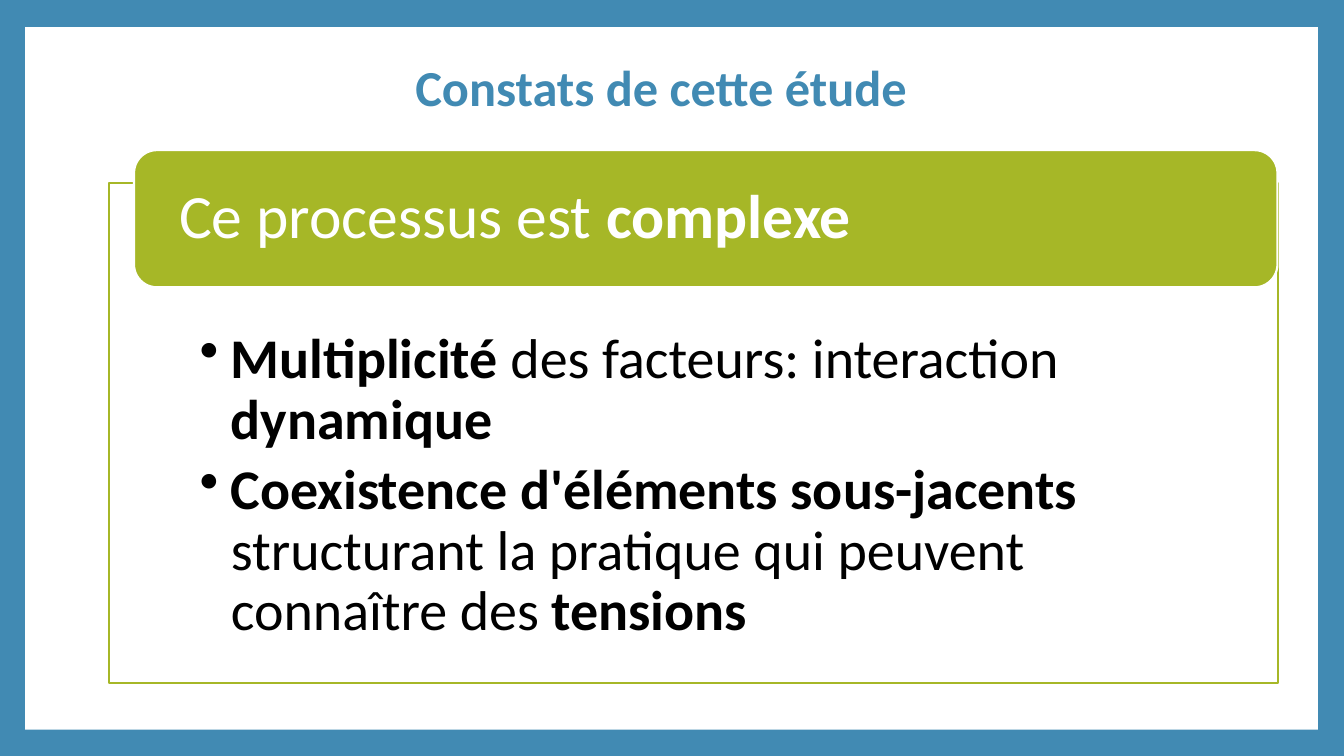
import pptx
import pptx.dml.color
import pptx.enum.shapes
import pptx.enum.text
import pptx.oxml.ns
import pptx.util
from lxml import etree
from pptx.util import Inches

BLUE = pptx.dml.color.RGBColor(0x41, 0x8A, 0xB3)
GREEN = pptx.dml.color.RGBColor(0xA6, 0xB7, 0x27)
WHITE = pptx.dml.color.RGBColor(0xFF, 0xFF, 0xFF)
BLACK = pptx.dml.color.RGBColor(0x00, 0x00, 0x00)

SHAPES = pptx.enum.shapes.MSO_SHAPE
ALIGN = pptx.enum.text.PP_ALIGN
ANCHOR = pptx.enum.text.MSO_ANCHOR


class SlideBuilder:
    """Holds the text style and the slide being built."""

    font = "Calibri"
    line_spacing = 0.9
    bullet_indent = Inches(0.31)

    def __init__(self, slide, background):
        self.slide = slide
        slide.background.fill.solid()
        slide.background.fill.fore_color.rgb = background

    def add_runs(self, paragraph, runs, size, color, align=ALIGN.LEFT):
        paragraph.alignment = align
        paragraph.line_spacing = self.line_spacing
        for text, bold in runs:
            run = paragraph.add_run()
            run.text = text
            run.font.name = self.font
            run.font.size = pptx.util.Pt(size)
            run.font.bold = bold
            run.font.color.rgb = color

    def frame(self, shape, insets, anchor):
        frame = shape.text_frame
        frame.word_wrap = True
        frame.auto_size = pptx.enum.text.MSO_AUTO_SIZE.NONE
        frame.vertical_anchor = anchor
        (frame.margin_left, frame.margin_top,
         frame.margin_right, frame.margin_bottom) = map(Inches, insets)
        return frame

    def title(self, box, text, size, color):
        shape = self.slide.shapes.title
        shape.left, shape.top, shape.width, shape.height = map(Inches, box)
        frame = self.frame(shape, (0.1, 0.05, 0.1, 0.05), ANCHOR.MIDDLE)
        self.add_runs(frame.paragraphs[0], [(text, True)], size, color, ALIGN.CENTER)

    def panel(self, kind, box, fill, line=None):
        shape = self.slide.shapes.add_shape(kind, *map(Inches, box))
        shape.shadow.inherit = False
        shape.fill.solid()
        shape.fill.fore_color.rgb = fill
        if line is None:
            shape.line.fill.background()
        else:
            shape.line.color.rgb = line
            shape.line.width = pptx.util.Pt(1.5)
        return shape

    def heading(self, shape, runs, size, color):
        frame = self.frame(shape, (0.38, 0.06, 0.38, 0.06), ANCHOR.MIDDLE)
        self.add_runs(frame.paragraphs[0], runs, size, color)

    def bullets(self, shape, items, size, color):
        frame = self.frame(shape, (0.9, 1.46, 0.9, 0.31), ANCHOR.TOP)
        for index, runs in enumerate(items):
            paragraph = frame.add_paragraph() if index else frame.paragraphs[0]
            self.add_runs(paragraph, runs, size, color)
            paragraph.level = 1
            paragraph.space_after = pptx.util.Pt(7)
            properties = paragraph._p.get_or_add_pPr()
            properties.set("marL", str(self.bullet_indent))
            properties.set("indent", str(-self.bullet_indent))
            bullet = etree.SubElement(properties, pptx.oxml.ns.qn("a:buChar"))
            bullet.set("char", "•")


def main():
    presentation = pptx.Presentation()
    presentation.slide_width = Inches(13.33)
    presentation.slide_height = Inches(7.5)
    slide = presentation.slides.add_slide(presentation.slide_layouts[5])
    builder = SlideBuilder(slide, BLUE)

    # White page inside the blue border, placed behind the title
    page = builder.panel(SHAPES.RECTANGLE, (0.25, 0.27, 12.82, 6.97), WHITE)
    slide.shapes.title._element.addprevious(page._element)
    builder.title((2.44, 0.37, 8.35, 1.04), "Constats de cette étude ", 36, BLUE)

    # Framed list of findings
    findings = builder.panel(SHAPES.RECTANGLE, (1.08, 1.82, 11.6, 4.96), WHITE, GREEN)
    builder.bullets(findings, [
        [("Multiplicité ", True),
         ("des facteurs: interaction ", False),
         ("dynamique", True)],
        [("Coexistence d'éléments sous-jacents ", True),
         ("structurant la pratique qui peuvent connaître des ", False),
         ("tensions", True)],
    ], 40, BLACK)

    # Green heading over the top edge of the frame
    banner = builder.panel(SHAPES.ROUNDED_RECTANGLE, (1.33, 1.49, 11.34, 1.36), GREEN, WHITE)
    builder.heading(banner, [("Ce processus est ", False), ("complexe", True)], 44, WHITE)

    presentation.save("out.pptx")


if __name__ == "__main__":
    main()
